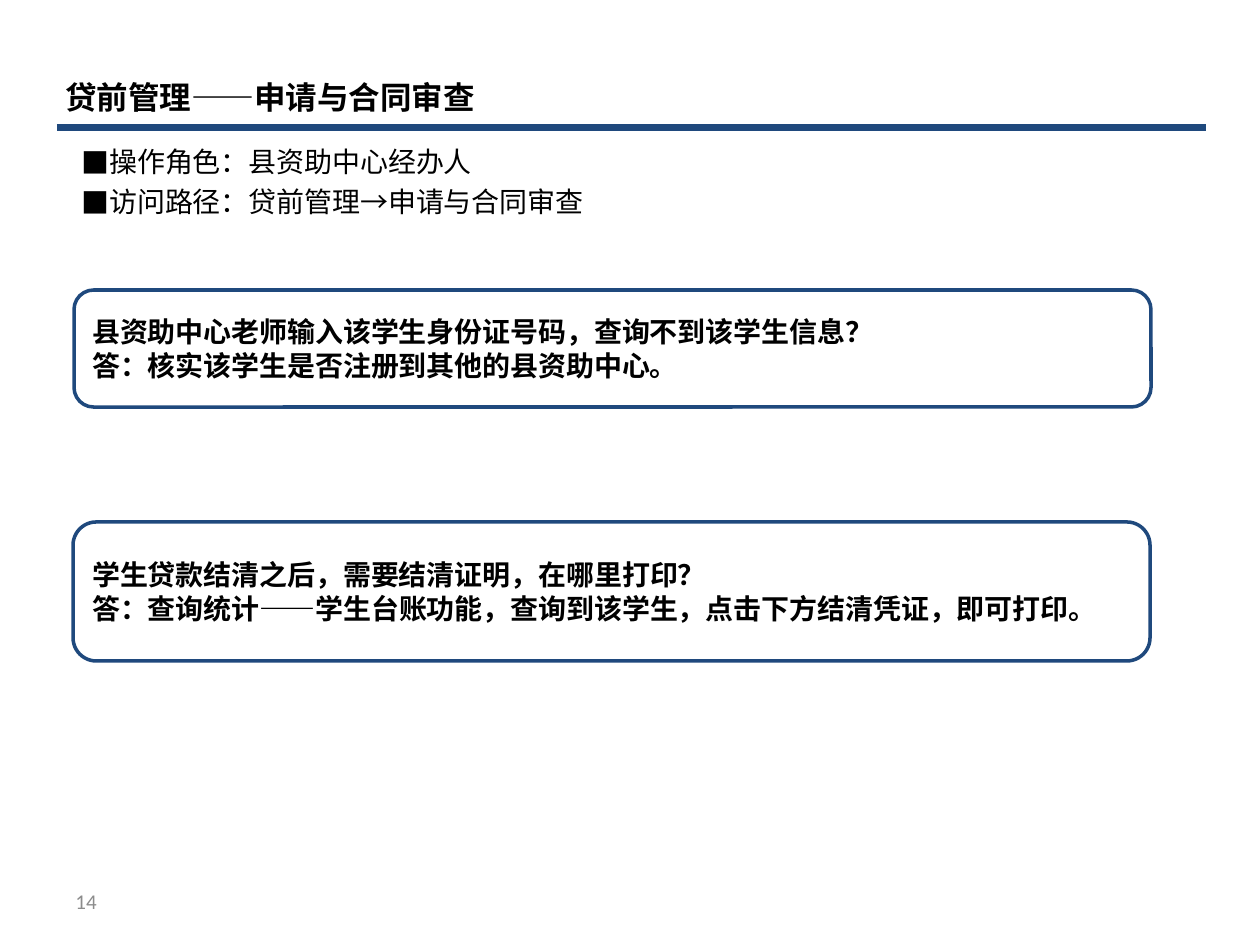
"""Build the loan review question-and-answer slide."""
from dataclasses import dataclass

from lxml import etree
from pptx import Presentation
from pptx.dml.color import RGBColor
from pptx.enum.shapes import MSO_CONNECTOR, MSO_SHAPE
from pptx.enum.text import MSO_ANCHOR, PP_ALIGN
from pptx.oxml.ns import qn
from pptx.util import Emu, Pt

STRAIGHT = MSO_CONNECTOR.STRAIGHT
ROUNDED = MSO_SHAPE.FLOWCHART_ALTERNATE_PROCESS
MIDDLE, TOP = MSO_ANCHOR.MIDDLE, MSO_ANCHOR.TOP
LEFT = PP_ALIGN.LEFT
PX_PER_INCH = 126
BLANK_LAYOUT = 6


@dataclass(frozen=True)
class Theme:
    """Hold the colours, fonts and type sizes."""

    navy: RGBColor = RGBColor(0x1F, 0x49, 0x7D)
    white: RGBColor = RGBColor(0xFF, 0xFF, 0xFF)
    black: RGBColor = RGBColor(0, 0, 0)
    grey: RGBColor = RGBColor(0x8C, 0x8C, 0x8C)
    east_asian: str = "Noto Sans CJK SC"
    title_font: str = "Arial"
    number_font: str = "Calibri"
    title_size: Pt = Pt(18)
    body_size: Pt = Pt(16)
    number_size: Pt = Pt(12)


THEME = Theme()
TITLE = {"name": THEME.title_font, "size": THEME.title_size, "bold": True}
BODY = {"name": THEME.east_asian, "size": THEME.body_size}
ANSWER = {**BODY, "bold": True}
NUMBER = {"name": THEME.number_font, "size": THEME.number_size}
BULLET_SPACING = {"line_spacing": Pt(20)}
ANSWER_SPACING = {"line_spacing": Pt(19)}


def px(length):
    """Turn pixels into EMU."""
    return Emu(round(length * 914400 / PX_PER_INCH))


def set_values(target, values):
    """Set each attribute in values on target."""
    for name, value in values.items():
        setattr(target, name, value)


def add_bullet(para):
    """Give a paragraph a square bullet with a hanging indent."""
    properties = para._p.get_or_add_pPr()
    properties.set("marL", str(px(25)))
    properties.set("indent", str(-px(25)))
    etree.SubElement(properties, qn("a:buFont"), typeface=THEME.east_asian)
    etree.SubElement(properties, qn("a:buChar"), char="■")


def write_lines(frame, lines, font, spacing=None, color=THEME.black,
                bulleted=False, gap=Pt(0)):
    """Write one paragraph for each line."""
    for index, line in enumerate(lines):
        para = frame.add_paragraph() if index else frame.paragraphs[0]
        if bulleted:
            add_bullet(para)
        set_values(para, {"alignment": LEFT, **(spacing or {})})
        if index and gap:
            para.space_before = gap
        span = para.add_run()
        span.text = line
        set_values(span.font, font)
        span.font.color.rgb = color
        etree.SubElement(span._r.get_or_add_rPr(), qn("a:ea"),
                         typeface=THEME.east_asian)


def add_text(page, bounds, lines, font, anchor=MIDDLE, **options):
    """Add a wrapping text box."""
    frame = page.shapes.add_textbox(*map(px, bounds)).text_frame
    set_values(frame, {"word_wrap": True, "vertical_anchor": anchor})
    write_lines(frame, lines, font, **options)


def add_rule(page, left, right, top):
    """Add the thick rule below the title."""
    rule = page.shapes.add_connector(STRAIGHT, *map(px, (left, top, right, top)))
    set_values(rule.line, {"width": Pt(4)})
    rule.line.color.rgb = THEME.navy
    etree.SubElement(rule._element.spPr, qn("a:effectLst"))


def add_answer_box(page, bounds, lines):
    """Add an outlined rounded box with a question and its answer."""
    box = page.shapes.add_shape(ROUNDED, *map(px, bounds))
    box.shadow.inherit = False
    box.fill.solid()
    box.fill.fore_color.rgb = THEME.white
    box.line.color.rgb = THEME.navy
    box.line.width = Pt(2)
    set_values(box.text_frame, {"word_wrap": True, "vertical_anchor": MIDDLE,
                                "margin_top": 0, "margin_bottom": 0})
    write_lines(box.text_frame, lines, ANSWER, ANSWER_SPACING)


def main():
    """Build and save the deck."""
    deck = Presentation()
    set_values(deck, {"slide_width": px(1260), "slide_height": px(945)})
    page = deck.slides.add_slide(deck.slide_layouts[BLANK_LAYOUT])
    add_rule(page, 57, 1206, 128)
    add_text(page, (53, 71, 1134, 52), ["贷前管理——申请与合同审查"], TITLE)
    add_text(page, (63, 876, 294, 50), ["14"], NUMBER, color=THEME.grey)
    add_text(page, (69, 137, 1131, 88),
             ["操作角色：县资助中心经办人", "访问路径：贷前管理→申请与合同审查"],
             BODY, anchor=TOP, spacing=BULLET_SPACING, bulleted=True, gap=Pt(3))
    add_answer_box(page, (74, 290, 1077, 117),
                   ["县资助中心老师输入该学生身份证号码，查询不到该学生信息？",
                    "答：核实该学生是否注册到其他的县资助中心。"])
    add_answer_box(page, (73, 522, 1077, 139),
                   ["学生贷款结清之后，需要结清证明，在哪里打印？",
                    "答：查询统计——学生台账功能，查询到该学生，点击下方结清凭证，即可打印。"])
    deck.save("out.pptx")


if __name__ == "__main__":
    main()
